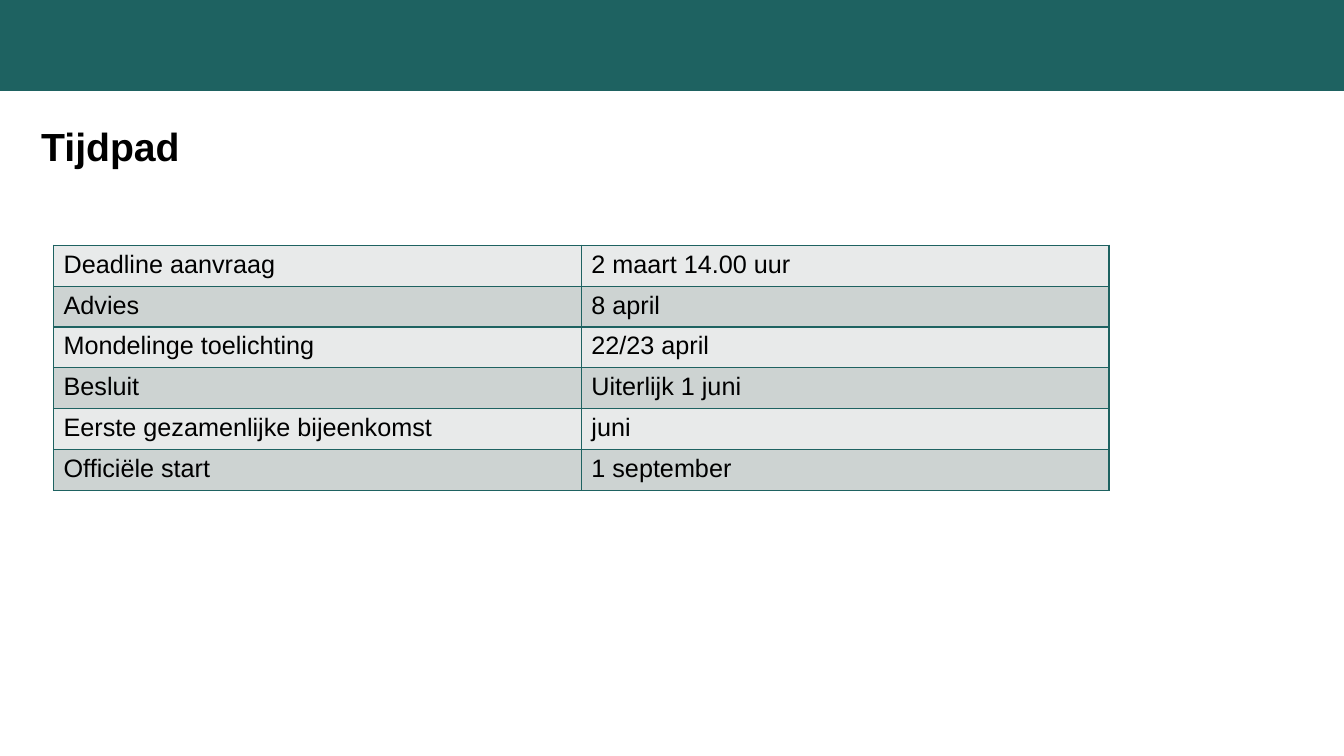
"""Builds the slide 'Tijdpad' with a table of dates."""
from lxml import etree
from pptx import Presentation
from pptx import util as u
from pptx.dml.color import RGBColor
from pptx.enum import shapes, text
from pptx.oxml.ns import qn

HEADING = "Tijdpad"
TIMELINE = [
    ("Deadline aanvraag", "2 maart 14.00 uur"),
    ("Advies", "8 april"),
    ("Mondelinge toelichting", "22/23 april"),
    ("Besluit", "Uiterlijk 1 juni"),
    ("Eerste gezamenlijke bijeenkomst", "juni"),
    ("Officiële start", "1 september"),
]
COLOURS = {"teal": "1E6261", "light": "E8EAEA", "dark": "CDD3D2", "ink": "000000"}
FONT = "Arial"
SLIDE_WIDTH, SLIDE_HEIGHT = u.Cm(33.87), u.Cm(19.05)
COLUMN_WIDTH, ROW_HEIGHT = u.Cm(13.3), u.Cm(1.03)


def colour(name):
    return RGBColor.from_string(COLOURS[name])


def add_run(paragraph, wording, size, bold=False):
    run = paragraph.add_run()
    run.text = wording
    run.font.name, run.font.size, run.font.bold = FONT, u.Pt(size), bold
    run.font.color.rgb = colour("ink")


def add_borders(cell):
    properties = cell._tc.get_or_add_tcPr()
    for side in ("lnL", "lnR", "lnT", "lnB"):
        border = etree.SubElement(properties, qn(f"a:{side}"), w=str(u.Pt(1)))
        fill = etree.SubElement(border, qn("a:solidFill"))
        etree.SubElement(fill, qn("a:srgbClr"), val=COLOURS["teal"])


def add_banner(slide):
    banner = slide.shapes.add_shape(
        shapes.MSO_SHAPE.RECTANGLE, 0, 0, SLIDE_WIDTH, u.Cm(2.29))
    banner.shadow.inherit = False
    banner.fill.solid()
    banner.fill.fore_color.rgb = colour("teal")
    banner.line.fill.background()


def add_heading(slide):
    frame = slide.shapes.add_textbox(
        u.Cm(0.94), u.Cm(3.1), u.Cm(31.72), u.Cm(2.57)).text_frame
    frame.word_wrap = True
    frame.vertical_anchor = text.MSO_ANCHOR.TOP
    frame.margin_left, frame.margin_top = u.Cm(0.1), u.Cm(0.05)
    frame.paragraphs[0].line_spacing = u.Pt(32)
    add_run(frame.paragraphs[0], HEADING, 28, bold=True)


def add_timeline(slide):
    row_count, column_count = len(TIMELINE), len(TIMELINE[0])
    timeline = slide.shapes.add_table(
        row_count, column_count, u.Cm(1.35), u.Cm(6.18),
        COLUMN_WIDTH * column_count, ROW_HEIGHT * row_count).table
    timeline.first_row = timeline.horz_banding = False
    for column in timeline.columns:
        column.width = COLUMN_WIDTH
    for r, step in enumerate(TIMELINE):
        timeline.rows[r].height = ROW_HEIGHT
        for c, wording in enumerate(step):
            cell = timeline.cell(r, c)
            add_borders(cell)
            cell.fill.solid()
            cell.fill.fore_color.rgb = colour("dark" if r % 2 else "light")
            add_run(cell.text_frame.paragraphs[0], wording, 18)


def main():
    deck = Presentation()
    deck.slide_width, deck.slide_height = SLIDE_WIDTH, SLIDE_HEIGHT
    slide = deck.slides.add_slide(deck.slide_layouts[6])
    add_banner(slide)
    add_heading(slide)
    add_timeline(slide)
    deck.save("out.pptx")


if __name__ == "__main__":
    main()
